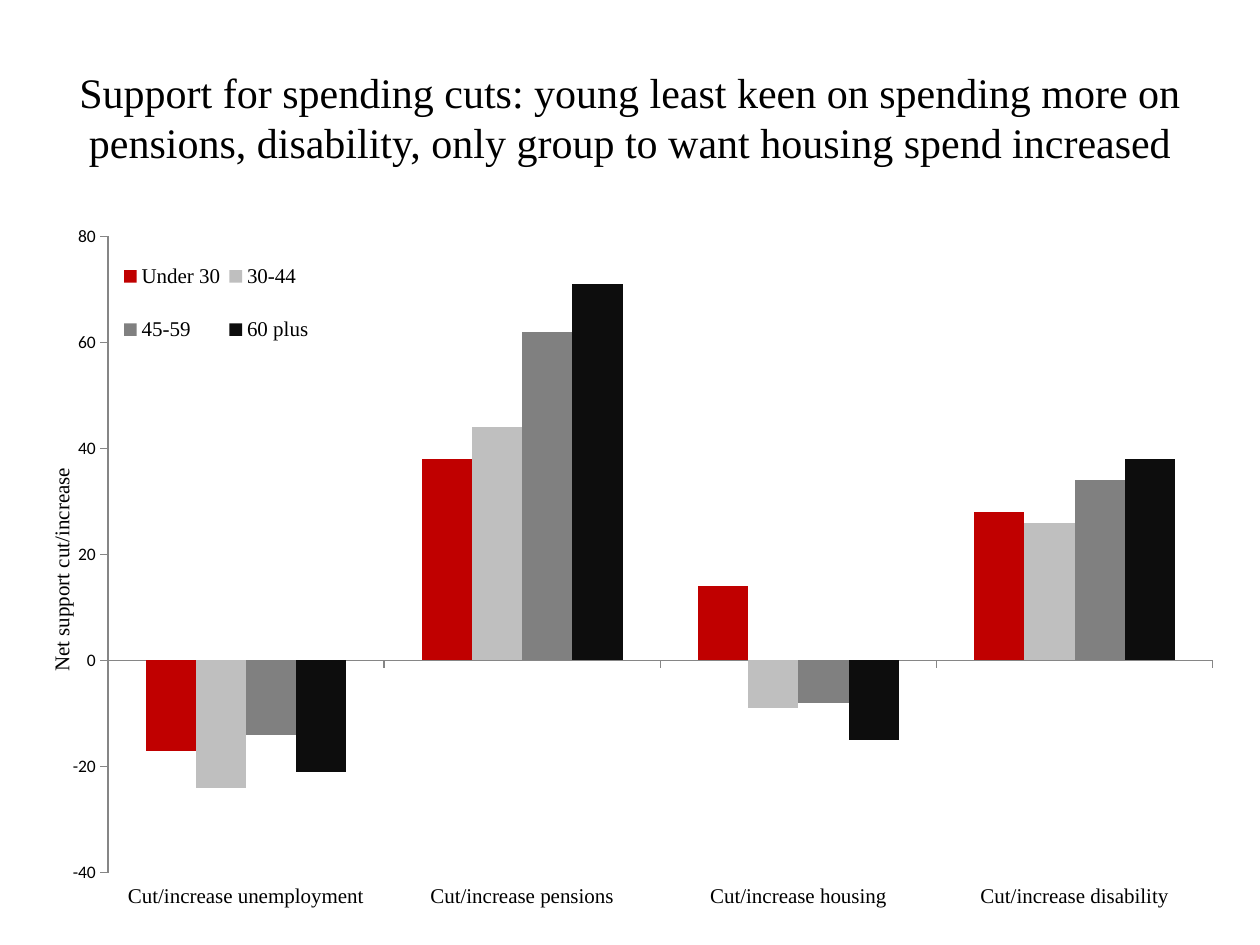
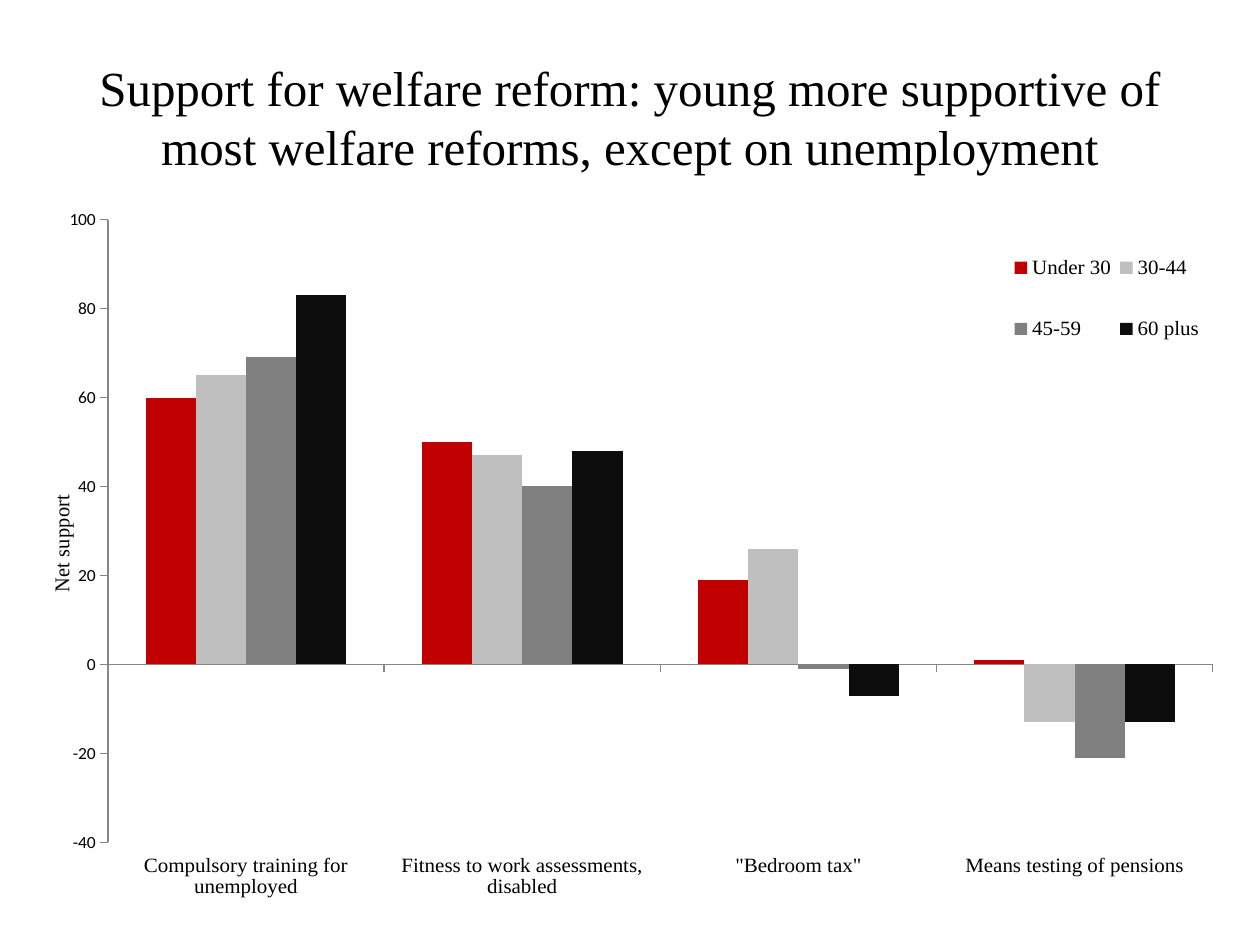
import pptx
import pptx.chart.data
import pptx.dml.color
import pptx.enum.chart
import pptx.enum.text
import pptx.oxml
import pptx.oxml.ns
import pptx.util
from dataclasses import dataclass

Inches = pptx.util.Inches
Pt = pptx.util.Pt
RGB = pptx.dml.color.RGBColor.from_string
Tick = pptx.enum.chart.XL_TICK_MARK
Labels = pptx.enum.chart.XL_TICK_LABEL_POSITION


@dataclass(frozen=True)
class Theme:
    serif: str = "Times New Roman"
    sans: str = "Calibri"
    ink: str = "000000"
    axis: str = "868686"
    bars: tuple = ("C00000", "BFBFBF", "808080", "0D0D0D")
    label: int = 12
    scale: int = 10


AGES = ("Under 30", "30-44", "45-59", "60 plus")
PLOT = (0.061, 0.023, 0.928, 0.925)


def apply(target, values):
    for name, value in values.items():
        setattr(target, name, value)


def place(node, box, after=None, inner=False):
    """Fix a chart part at box, given as fractions of the chart: x, y, w, h."""
    find = pptx.oxml.ns.qn
    for old in node.findall(find("c:layout")):
        node.remove(old)
    modes = '<c:layoutTarget val="inner"/>' if inner else ""
    modes += '<c:xMode val="edge"/><c:yMode val="edge"/>'
    sizes = "".join(f'<c:{key} val="{val}"/>' for key, val in zip("xywh", box))
    layout = pptx.oxml.parse_xml(
        f'<c:layout {pptx.oxml.ns.nsdecls("c")}><c:manualLayout>'
        f"{modes}{sizes}</c:manualLayout></c:layout>")
    if after:
        node.find(find(after)).addnext(layout)
    else:
        node.insert(0, layout)


class Deck:
    def __init__(self, theme):
        self.theme = theme
        self.file = pptx.Presentation()
        apply(self.file, {"slide_width": Inches(10), "slide_height": Inches(7.5)})
        self.slide = None

    def add(self):
        self.slide = self.file.slides.add_slide(self.file.slide_layouts[6])

    def style(self, font, face, size):
        apply(font, {"name": face, "size": Pt(size), "bold": False})
        font.color.rgb = RGB(self.theme.ink)

    def title(self, text, size):
        box = self.slide.shapes.add_textbox(
            Inches(0.5), Inches(0.3), Inches(9), Inches(1.25))
        apply(box.text_frame, {
            "word_wrap": True, "text": text,
            "vertical_anchor": pptx.enum.text.MSO_ANCHOR.MIDDLE})
        para = box.text_frame.paragraphs[0]
        para.alignment = pptx.enum.text.PP_ALIGN.CENTER
        self.style(para.runs[0].font, self.theme.serif, size)

    def chart(self, top, height, cats, rows):
        data = pptx.chart.data.CategoryChartData()
        data.categories = cats
        for age, row in zip(AGES, rows):
            data.add_series(age, row)
        chart = self.slide.shapes.add_chart(
            pptx.enum.chart.XL_CHART_TYPE.COLUMN_CLUSTERED,
            Inches(0.28), Inches(top), Inches(9.45), Inches(height), data).chart
        chart.has_title = False
        self.style(chart.font, self.theme.sans, self.theme.scale)
        plot = chart.plots[0]
        apply(plot, {"gap_width": 150, "overlap": 0, "vary_by_categories": False})
        for series, color in zip(plot.series, self.theme.bars):
            series.invert_if_negative = False
            series.format.fill.solid()
            series.format.fill.fore_color.rgb = RGB(color)
        place(chart.plots[0]._element.getparent(), PLOT, inner=True)
        return chart

    def axes(self, chart, name, peak, spot):
        for axis in (chart.category_axis, chart.value_axis):
            apply(axis, {"has_major_gridlines": False, "major_tick_mark": Tick.OUTSIDE,
                         "minor_tick_mark": Tick.NONE})
            axis.format.line.color.rgb = RGB(self.theme.axis)
            axis.format.line.width = Pt(0.75)
        chart.category_axis.tick_label_position = Labels.LOW
        self.style(chart.category_axis.tick_labels.font,
                   self.theme.serif, self.theme.label)
        apply(chart.value_axis, {"minimum_scale": -40, "maximum_scale": peak,
                                 "major_unit": 20})
        head = chart.value_axis.axis_title
        head.text_frame.text = name
        self.style(head.text_frame.paragraphs[0].runs[0].font,
                   self.theme.serif, self.theme.label)
        turn = head.text_frame._txBody.bodyPr
        turn.set("rot", "-5400000")
        turn.set("vert", "horz")
        place(head._element, spot, after="c:tx")

    def legend(self, chart, box):
        chart.has_legend = True
        apply(chart.legend, {"position": pptx.enum.chart.XL_LEGEND_POSITION.RIGHT,
                             "include_in_layout": False})
        self.style(chart.legend.font, self.theme.serif, self.theme.label)
        place(chart.legend._element, box, after="c:legendPos")


SLIDES = (
    {"title": ("Support for spending cuts: young least keen on spending more on "
               "pensions, disability, only group to want housing spend increased", 24),
     "chart": (1.75, 5.46,
               ("Cut/increase unemployment", "Cut/increase pensions",
                "Cut/increase housing", "Cut/increase disability"),
               ((-17, 38, 14, 28), (-24, 44, -9, 26),
                (-14, 62, -8, 34), (-21, 71, -15, 38))),
     "axes": ("Net support cut/increase", 80, (0.008, 0.354)),
     "legend": (0.067, 0.02, 0.17, 0.2)},
    {"title": ("Support for welfare reform: young more supportive of most welfare "
               "reforms, except on unemployment", 28),
     "chart": (1.62, 5.51,
               ("Compulsory training for unemployed",
                "Fitness to work assessments, disabled",
                '"Bedroom tax"', "Means testing of pensions"),
               ((60, 50, 19, 1), (65, 47, 26, -13),
                (69, 40, -1, -21), (83, 48, -7, -13))),
     "axes": ("Net support", 100, (0.008, 0.43)),
     "legend": (0.815, 0.02, 0.17, 0.24)},
)


def main():
    deck = Deck(Theme())
    for page in SLIDES:
        deck.add()
        deck.title(*page["title"])
        chart = deck.chart(*page["chart"])
        deck.axes(chart, *page["axes"])
        deck.legend(chart, page["legend"])
    deck.file.save("out.pptx")


if __name__ == "__main__":
    main()
